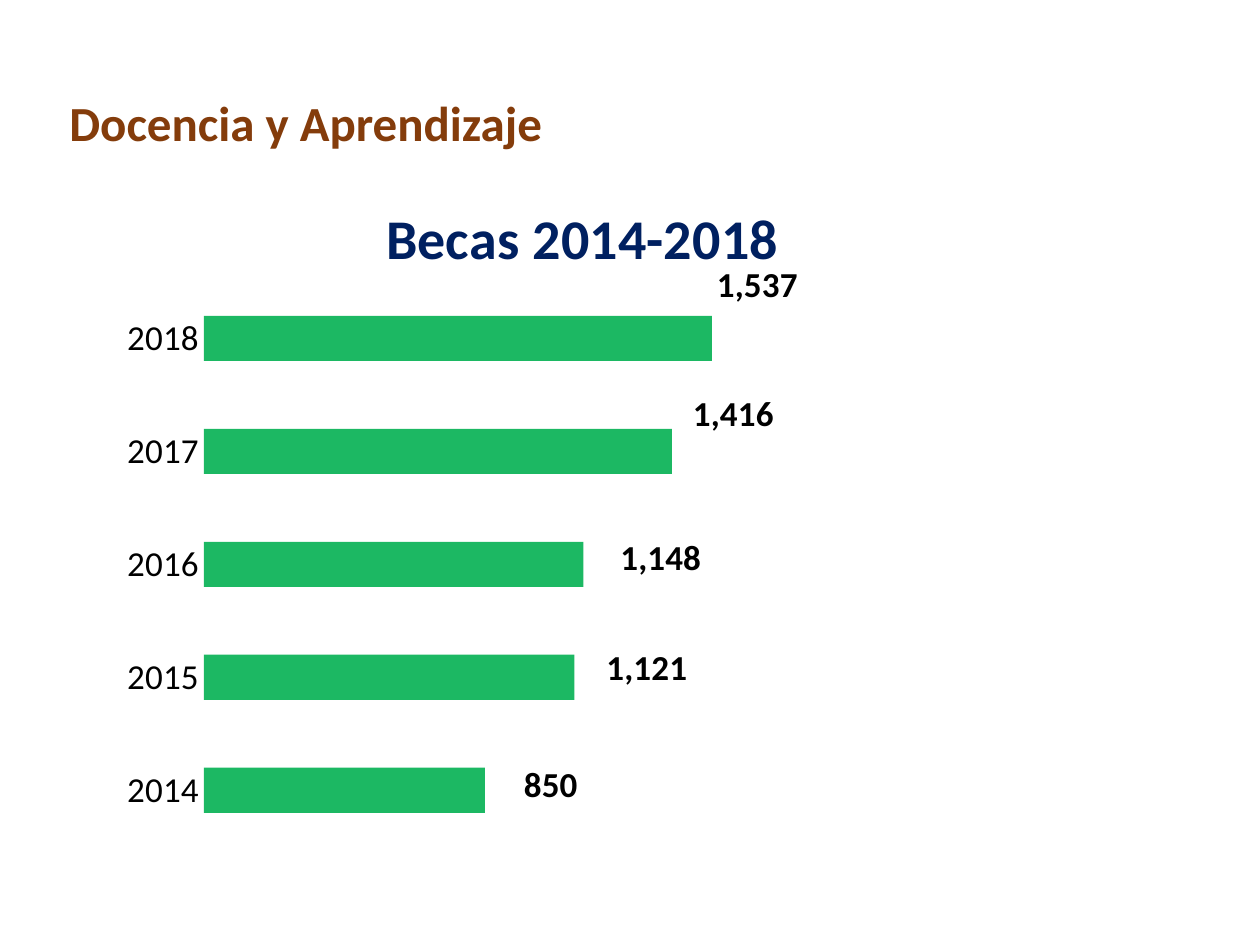
from typing import Any, NamedTuple

from lxml import etree
from pptx import Presentation
from pptx import util as u
from pptx.chart.data import CategoryChartData
from pptx.dml.color import RGBColor
from pptx.enum import chart as ch
from pptx.oxml import ns

SCALE = 914400 / 126
FACE = "Calibri"
BROWN = RGBColor(0x84, 0x3C, 0x0B)
NAVY = RGBColor(0x00, 0x20, 0x60)
GREEN = RGBColor(0x00, 0xB0, 0x50)
BLACK = RGBColor(0, 0, 0)


class Box(NamedTuple):
    left: int
    top: int
    width: int
    height: int


class Grant(NamedTuple):
    """One year's count, and its label's shift in px."""
    year: str
    count: int
    dx: int
    dy: int


HEAD = Box(57, 86, 751, 72)
AREA = Box(88, 179, 989, 766)
GRANTS = [
    Grant("2014", 850, 34, -5),
    Grant("2015", 1121, 27, -9),
    Grant("2016", 1148, 32, -6),
    Grant("2017", 1416, 16, -37),
    Grant("2018", 1537, 0, -53),
]


def px(n: int) -> u.Emu:
    return u.Emu(round(n * SCALE))


def style(font: Any, size: int, color: RGBColor, bold: bool) -> None:
    font.name = FACE
    font.size = u.Pt(size)
    font.bold = bold
    font.color.rgb = color


def place(parent: Any, index: int, **parts: Any) -> None:
    """Give a chart part a manual layout."""
    for old in parent.findall(ns.qn("c:layout")):
        parent.remove(old)
    layout = etree.Element(ns.qn("c:layout"))
    manual = etree.SubElement(layout, ns.qn("c:manualLayout"))
    for tag, value in parts.items():
        etree.SubElement(manual, ns.qn(f"c:{tag}")).set("val", str(value))
    parent.insert(index, layout)


def add_head(slide: Any) -> None:
    frame = slide.shapes.add_textbox(*map(px, HEAD)).text_frame
    frame.word_wrap = True
    frame.text = "Docencia y Aprendizaje"
    style(frame.paragraphs[0].runs[0].font, 28, BROWN, True)


def add_title(chart: Any) -> None:
    title = chart.chart_title
    title.text_frame.text = "Becas 2014-2018"
    style(title.text_frame.paragraphs[0].runs[0].font, 32, NAVY, True)
    title.include_in_layout = False
    place(title._element, 1, xMode="edge", yMode="edge",
          x=288 / AREA.width, y=10 / AREA.height)


def set_axes(chart: Any) -> None:
    years, counts = chart.category_axis, chart.value_axis
    style(years.tick_labels.font, 20, BLACK, False)
    years.major_tick_mark = ch.XL_TICK_MARK.NONE
    years.format.line.fill.background()
    counts.minimum_scale, counts.maximum_scale = 0, 1800
    counts.has_major_gridlines = False
    counts.visible = False


def set_labels(bars: Any) -> None:
    labels = bars.data_labels
    labels.show_value = True
    style(labels.font, 20, BLACK, True)
    for i in range(len(GRANTS)):
        label = bars.points[i].data_label
        style(label.font, 20, BLACK, True)
        label.position = ch.XL_LABEL_POSITION.OUTSIDE_END
    tags = list(bars._element.iter(ns.qn("c:dLbl")))
    for tag, grant in zip(tags, GRANTS):
        place(tag, 1, x=grant.dx / AREA.width, y=grant.dy / AREA.height)
    for lead in bars._element.iter(ns.qn("c:showLeaderLines")):
        lead.set("val", "0")


def set_bars(plot: Any) -> None:
    plot.gap_width = 150
    plot.vary_by_categories = False
    bars = plot.series[0]
    fill = bars.format.fill
    fill.solid()
    fill.fore_color.rgb = GREEN
    color = bars._element.find(".//" + ns.qn("a:srgbClr"))
    etree.SubElement(color, ns.qn("a:alpha")).set("val", "89000")
    set_labels(bars)


def add_bars(slide: Any) -> None:
    data = CategoryChartData(number_format="#,##0")
    data.categories = [g.year for g in GRANTS]
    data.add_series("Series 1", [g.count for g in GRANTS])
    kind = ch.XL_CHART_TYPE.BAR_CLUSTERED
    chart = slide.shapes.add_chart(kind, *map(px, AREA), data).chart
    style(chart.font, 10, BLACK, False)
    chart.has_legend = False
    add_title(chart)
    set_axes(chart)
    set_bars(chart.plots[0])
    area = chart._chartSpace.find(".//" + ns.qn("c:plotArea"))
    place(area, 0, layoutTarget="inner", xMode="edge", yMode="edge",
          x=116 / AREA.width, y=103 / AREA.height,
          w=595 / AREA.width, h=565 / AREA.height)


def main() -> None:
    deck = Presentation()
    deck.slide_width, deck.slide_height = px(1260), px(945)
    slide = deck.slides.add_slide(deck.slide_layouts[6])
    add_head(slide)
    add_bars(slide)
    deck.save("out.pptx")


if __name__ == "__main__":
    main()
